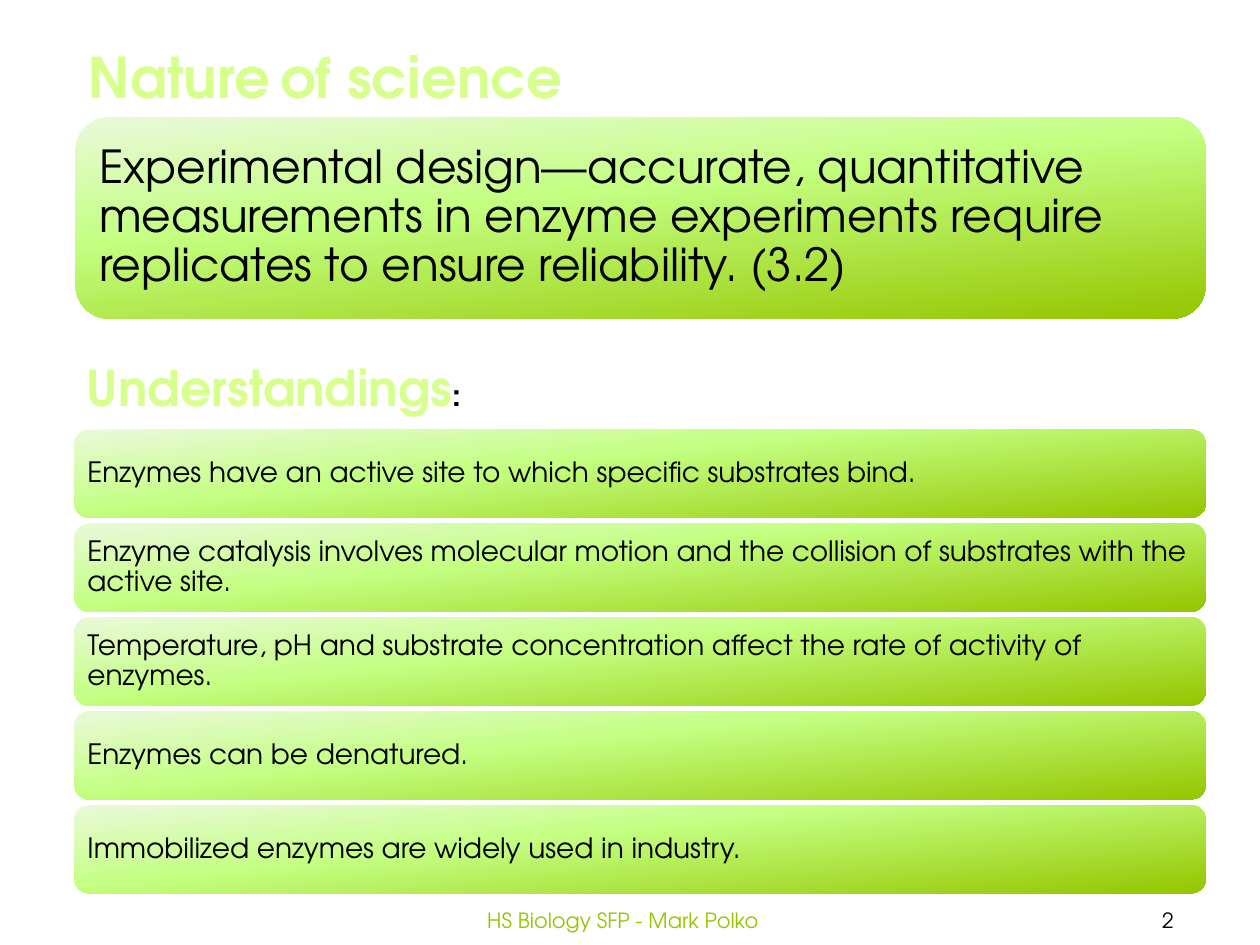
"""Build the slide on the nature of science and enzyme understandings."""
from copy import deepcopy

from pptx import Presentation
from pptx.dml.color import RGBColor
from pptx.enum.shapes import MSO_SHAPE
from pptx.enum.text import MSO_ANCHOR, MSO_AUTO_SIZE, PP_ALIGN
from pptx.oxml.ns import qn
from pptx.util import Inches, Pt

ROUNDED = MSO_SHAPE.ROUNDED_RECTANGLE
TOP, MIDDLE = MSO_ANCHOR.TOP, MSO_ANCHOR.MIDDLE
LEFT, CENTER = PP_ALIGN.LEFT, PP_ALIGN.CENTER
FIXED = MSO_AUTO_SIZE.NONE

FONT = "TeX Gyre Adventor"
BLACK, LIME, GREEN = "000000", "D6FF8C", "94C600"
GRADIENT = [(0, "EAF9DA"), (0.4, "C4FF82"), (1, GREEN)]
GRADIENT_ANGLE = 276

TITLE = [("Nature", 32, LIME, True), (" ", 20, BLACK, True), ("of science", 32, LIME, True)]
SUBTITLE = [("Understandings", 28, LIME, True), (":", 18, BLACK, True)]
FOOTER = [("HS Biology SFP - Mark Polko", 12, GREEN, False)]
PAGE_NUMBER = [("2", 12, BLACK, False)]
STATEMENT = (
    "Experimental design—accurate, quantitative measurements in enzyme "
    "experiments require replicates to ensure reliability. (3.2)"
)
UNDERSTANDINGS = [
    "Enzymes have an active site to which specific substrates bind.",
    "Enzyme catalysis involves molecular motion and the collision of substrates with the active site.",
    "Temperature, pH and substrate concentration affect the rate of activity of enzymes.",
    "Enzymes can be denatured.",
    "Immobilized enzymes are widely used in industry.",
]
CARD_LEFT, CARD_WIDTH, CARD_HEIGHT = 0.59, 8.98, 0.7
FIRST_TOP, LAST_TOP = 3.41, 6.39


def color(value):
    return RGBColor.from_string(value)


def apply(target, values):
    for name, value in values.items():
        setattr(target, name, value)


def place(shape, area):
    names = ("left", "top", "width", "height")
    apply(shape, dict(zip(names, map(Inches, area))))


def write(shape, spans, align=LEFT, spacing=1.0, **frame_format):
    frame = shape.text_frame
    apply(frame, {"auto_size": FIXED, **frame_format})
    para = frame.paragraphs[0]
    apply(para, {"alignment": align, "line_spacing": spacing})
    for text, size, ink, bold in spans:
        span = para.add_run()
        span.text = text
        apply(span.font, {"name": FONT, "size": Pt(size), "bold": bold})
        span.font.color.rgb = color(ink)


def add_label(page, area, spans, **text_format):
    write(page.shapes.add_textbox(*map(Inches, area)), spans, **text_format)


def fill_gradient(shape):
    shape.fill.gradient()
    shape.fill.gradient_angle = GRADIENT_ANGLE
    stop_list = shape._element.spPr.find(qn("a:gradFill")).find(qn("a:gsLst"))
    stop_list.append(deepcopy(stop_list[-1]))
    for stop, (position, ink) in zip(shape.fill.gradient_stops, GRADIENT):
        stop.position = position
        stop.color.rgb = color(ink)


def add_card(page, area, text, size, inset):
    card = page.shapes.add_shape(ROUNDED, *map(Inches, area))
    card.shadow.inherit = False
    card.line.fill.background()
    fill_gradient(card)
    margins = {f"margin_{side}": Inches(inset) for side in ("left", "top", "right", "bottom")}
    write(card, [(text, size, BLACK, False)], spacing=0.9,
          word_wrap=True, vertical_anchor=MIDDLE, **margins)


def main():
    deck = Presentation()
    apply(deck, {"slide_width": Inches(10), "slide_height": Inches(7.5)})
    page = deck.slides.add_slide(deck.slide_layouts[5])

    place(page.shapes.title, (0.58, 0.29, 4.01, 0.64))
    write(page.shapes.title, TITLE, align=CENTER, word_wrap=False, vertical_anchor=TOP)
    add_card(page, (0.6, 0.93, 8.97, 1.6), STATEMENT, 26, 0.11)

    add_label(page, (0.59, 2.79, 3.2, 0.57), SUBTITLE, word_wrap=False)
    pitch = (LAST_TOP - FIRST_TOP) / (len(UNDERSTANDINGS) - 1)
    for index, text in enumerate(UNDERSTANDINGS):
        top = FIRST_TOP + index * pitch
        add_card(page, (CARD_LEFT, top, CARD_WIDTH, CARD_HEIGHT), text, 16, 0.07)

    small = {"align": CENTER, "word_wrap": True, "vertical_anchor": MIDDLE}
    add_label(page, (3.03, 7.1, 3.83, 0.4), FOOTER, **small)
    add_label(page, (8.54, 7.1, 1.46, 0.4), PAGE_NUMBER, **small)
    deck.save("out.pptx")


if __name__ == "__main__":
    main()
